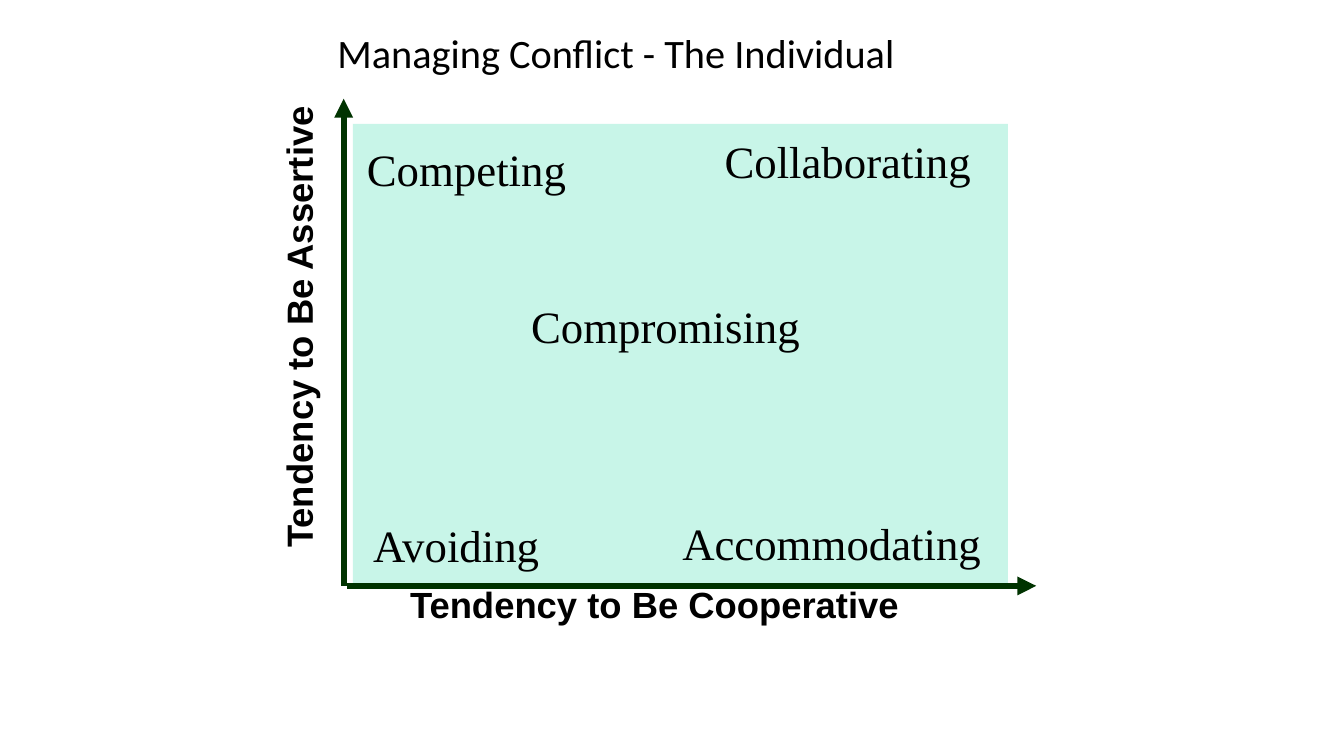
from lxml.etree import SubElement
from pptx import Presentation
from pptx.dml.color import RGBColor
from pptx.enum.shapes import MSO_CONNECTOR, MSO_SHAPE
from pptx.enum.text import MSO_ANCHOR, MSO_AUTO_SIZE, PP_ALIGN
from pptx.oxml.ns import qn
from pptx.util import Pt

COLORS = {"text": "000000", "grid": "C8F5E8", "axis": "003300"}
TITLE = {"name": "Calibri", "size": Pt(28.8), "bold": False}
AXIS = {"name": "Arial", "size": Pt(26), "bold": True}
STYLE = {"name": "Times New Roman", "size": Pt(32), "bold": False}
STYLES = [
    ("Avoiding", 5.75, 277.25, 134.6, PP_ALIGN.RIGHT),
    ("Competing", 3, 8.7, 158.4, PP_ALIGN.LEFT),
    ("Compromising", 120.25, 121, 216, PP_ALIGN.LEFT),
    ("Accommodating", 228.25, 275.75, 229.7, PP_ALIGN.LEFT),
    ("Collaborating", 258.5, 3, 199.4, PP_ALIGN.LEFT),
]


def add_label(s, text, box, font, align=PP_ALIGN.LEFT, rotation=0):
    """Add one line of text, centred vertically in its box."""
    sp = s.shapes.add_textbox(*map(Pt, box))
    sp.rotation = rotation
    tf = sp.text_frame
    tf.word_wrap = False
    tf.auto_size = MSO_AUTO_SIZE.SHAPE_TO_FIT_TEXT
    tf.vertical_anchor = MSO_ANCHOR.MIDDLE
    p = tf.paragraphs[0]
    p.alignment = align
    r = p.add_run()
    r.text = text
    for key, value in font.items():
        setattr(r.font, key, value)
    r.font.color.rgb = RGBColor.from_string(COLORS["text"])
    return sp


def add_arrow(s, x1, y1, x2, y2):
    """Add an axis line with a triangle at its end."""
    line = s.shapes.add_connector(MSO_CONNECTOR.STRAIGHT, *map(Pt, (x1, y1, x2, y2)))
    line.line.width = Pt(4.5)
    line.line.color.rgb = RGBColor.from_string(COLORS["axis"])
    SubElement(line.line._get_or_add_ln(), qn("a:tailEnd"), type="triangle")
    SubElement(line._element.spPr, qn("a:effectLst"))


def add_title(s, box):
    """Add the slide heading."""
    sp = add_label(s, "Managing Conflict - The Individual", box, TITLE)
    sp.text_frame.auto_size = MSO_AUTO_SIZE.NONE
    sp.text_frame.word_wrap = True
    sp.text_frame.paragraphs[0].line_spacing = 0.9


def add_conflict_grid(s, box):
    """Add the shaded field, its two axes and the five conflict styles."""
    x, y, w, h = box
    sp = s.shapes.add_shape(MSO_SHAPE.RECTANGLE, *map(Pt, box))
    sp.shadow.inherit = False
    sp.fill.solid()
    sp.fill.fore_color.rgb = RGBColor.from_string(COLORS["grid"])
    sp.line.fill.background()
    add_arrow(s, x - 4.3, y + h, x + w + 20.2, y + h)
    add_label(s, "Tendency to Be Cooperative", (x + 33.8, y + h - 6, 365.8, 38), AXIS)
    add_arrow(s, x - 6.5, y + h, x - 6.5, y - 18)
    add_label(s, "Tendency to Be Assertive", (x - 205.2, y + 124.6, 332.6, 38), AXIS, rotation=270)
    for text, dx, dy, width, align in STYLES:
        add_label(s, text, (x + dx, y + dy, width, 46), STYLE, align)


def main():
    """Build and save the slide."""
    prs = Presentation()
    prs.slide_width, prs.slide_height = Pt(960), Pt(540)
    s = prs.slides.add_slide(prs.slide_layouts[6])
    add_title(s, (234, 16, 520, 47.5))
    add_conflict_grid(s, (252, 88.5, 468, 330))
    prs.save("out.pptx")


if __name__ == "__main__":
    main()
